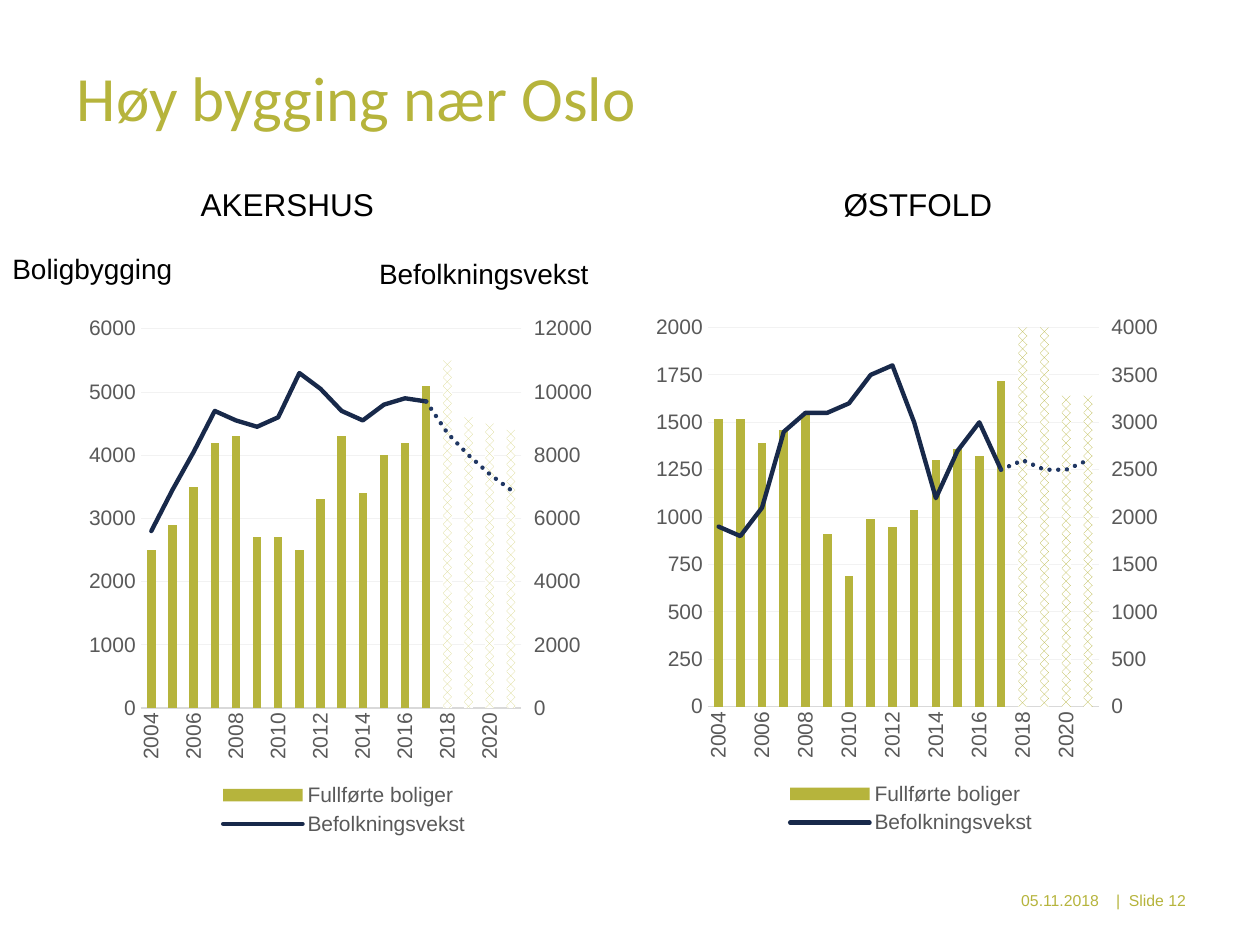
from copy import deepcopy
from dataclasses import dataclass

from lxml.etree import SubElement
from pptx import Presentation
from pptx.chart.axis import CategoryAxis, ValueAxis
from pptx.chart.data import CategoryChartData
from pptx.dml.color import RGBColor
from pptx.enum.chart import XL_CHART_TYPE, XL_LEGEND_POSITION, XL_MARKER_STYLE, XL_TICK_MARK
from pptx.enum.dml import MSO_LINE, MSO_PATTERN
from pptx.enum.text import MSO_ANCHOR, PP_ALIGN
from pptx.oxml import parse_xml
from pptx.oxml.ns import nsdecls, qn
from pptx.util import Inches, Pt


@dataclass(frozen=True)
class Theme:
    font: str = "Arial"
    title_font: str = "Calibri"
    olive: str = "B6B43C"
    pale_olive: str = "D9D889"
    navy: str = "18294A"
    forecast_navy: str = "203763"
    black: str = "000000"
    white: str = "FFFFFF"
    label_grey: str = "595959"
    axis_grey: str = "D9D9D9"
    grid_grey: str = "F2F2F2"
    title_size: int = 36
    heading_size: int = 18
    caption_size: int = 16
    chart_size: int = 12
    footer_size: int = 9


THEME = Theme()
COLUMNS, ROWS = 100, 75
SLIDE_WIDTH, SLIDE_HEIGHT = Inches(10), Inches(7.5)
YEARS = [str(year) for year in range(2004, 2022)]
LAST_ACTUAL = YEARS.index("2017")


@dataclass(frozen=True)
class County:
    name: str
    heading: tuple  # left offset and width, in columns
    plot_width: float  # share of the chart's width
    homes_max: int
    homes_step: int
    forecast_fill: str
    homes: tuple
    homes_forecast: tuple
    growth: tuple
    growth_forecast: tuple


AKERSHUS = County(
    "AKERSHUS", (6.1, 21), 0.73, 6000, 1000, THEME.pale_olive,
    homes=(2500, 2900, 3500, 4200, 4300, 2700, 2700, 2500, 3300, 4300, 3400, 4000, 4200, 5100),
    homes_forecast=(5500, 4600, 4500, 4400),
    growth=(5600, 6900, 8100, 9400, 9100, 8900, 9200, 10600, 10100, 9400, 9100, 9600, 9800, 9700),
    growth_forecast=(8700, 8000, 7400, 6900))
OSTFOLD = County(
    "ØSTFOLD", (12.1, 19.1), 0.75, 2000, 250, THEME.olive,
    homes=(1520, 1520, 1390, 1460, 1540, 910, 690, 990, 950, 1040, 1300, 1360, 1320, 1720),
    homes_forecast=(2210, 2030, 1640, 1640),
    growth=(1900, 1800, 2100, 2900, 3100, 3100, 3200, 3500, 3600, 3000, 2200, 2700, 3000, 2500),
    growth_forecast=(2600, 2500, 2500, 2600))


def on_grid(left, top, width, height):
    """Turn columns and rows into slide lengths."""
    column, row = SLIDE_WIDTH / COLUMNS, SLIDE_HEIGHT / ROWS
    return int(left * column), int(top * row), int(width * column), int(height * row)


def rgb(colour):
    return RGBColor.from_string(colour)


def style_font(font, size, colour, name=THEME.font):
    font.size, font.name = Pt(size), name
    font.color.rgb = rgb(colour)


def write(frame, text, size=THEME.caption_size, colour=THEME.black, name=THEME.font,
          align=PP_ALIGN.LEFT, anchor=MSO_ANCHOR.TOP, line_spacing=None):
    frame.word_wrap, frame.vertical_anchor = True, anchor
    paragraph = frame.paragraphs[0]
    paragraph.alignment, paragraph.line_spacing = align, line_spacing
    run = paragraph.add_run()
    run.text = text
    style_font(run.font, size, colour, name)


def add_text(slide, box, text, **text_format):
    write(slide.shapes.add_textbox(*on_grid(*box)).text_frame, text, **text_format)


def set_layout(parent, before, x, y, w, h, inner=False):
    """Fix a plot area or legend at shares of its chart."""
    for old in parent.findall(qn("c:layout")):
        parent.remove(old)
    layout = parse_xml(f"<c:layout {nsdecls('c')}><c:manualLayout/></c:layout>")
    settings = [("layoutTarget", "inner")] if inner else []
    settings += [("xMode", "edge"), ("yMode", "edge"), ("x", x), ("y", y), ("w", w), ("h", h)]
    for tag, value in settings:
        SubElement(layout[0], qn(f"c:{tag}")).set("val", str(value))
    if before is None:
        parent.insert(0, layout)
    else:
        before.addnext(layout)


def style_axes(chart, county):
    years, homes = chart.category_axis, chart.value_axis
    for axis in (years, homes):
        axis.major_tick_mark = axis.minor_tick_mark = XL_TICK_MARK.NONE
        style_font(axis.tick_labels.font, THEME.chart_size, THEME.label_grey)
    years.format.line.color.rgb = rgb(THEME.axis_grey)
    years.format.line.width = Pt(0.75)
    years._element.find(f"{qn('c:txPr')}/{qn('a:bodyPr')}").set("rot", "-5400000")
    skip = parse_xml(f'<c:tickLblSkip {nsdecls("c")} val="2"/>')
    years._element.find(qn("c:noMultiLvlLbl")).addprevious(skip)
    homes.minimum_scale, homes.maximum_scale = 0, county.homes_max
    homes.major_unit = county.homes_step
    homes.format.line.fill.background()
    homes.tick_labels.number_format = "0"
    homes.tick_labels.number_format_is_linked = False
    homes.major_gridlines.format.line.color.rgb = rgb(THEME.grid_grey)
    homes.major_gridlines.format.line.width = Pt(0.5)


def move_growth_to_right_axis(chart, county):
    """Draw the last two series as lines on a second axis, at twice the scale."""
    bars = chart.plots[0]._element
    lines = parse_xml(f'<c:lineChart {nsdecls("c")}><c:grouping val="standard"/>'
                      '<c:varyColors val="0"/></c:lineChart>')
    for series in bars.findall(qn("c:ser"))[2:]:
        for bar_only in series.findall(qn("c:invertIfNegative")):
            series.remove(bar_only)
        lines.append(series)
    SubElement(lines, qn("c:marker")).set("val", "1")
    bars.addnext(lines)

    years, homes = chart.category_axis._element, chart.value_axis._element
    right_years, right_growth = deepcopy(years), deepcopy(homes)
    ids = {"years": "5001", "growth": "5002"}
    for axis, own, other in ((right_years, "years", "growth"), (right_growth, "growth", "years")):
        axis.find(qn("c:axId")).set("val", ids[own])
        axis.find(qn("c:crossAx")).set("val", ids[other])
        SubElement(lines, qn("c:axId")).set("val", ids[own])
    right_growth.find(qn("c:axPos")).set("val", "r")
    right_growth.find(qn("c:crosses")).set("val", "max")
    homes.addnext(right_growth)
    right_growth.addnext(right_years)
    CategoryAxis(right_years).visible = False
    growth = ValueAxis(right_growth)
    growth.has_major_gridlines = False
    growth.major_tick_mark = XL_TICK_MARK.OUTSIDE
    growth.maximum_scale = 2 * county.homes_max
    growth.major_unit = 2 * county.homes_step


def style_series(chart, county):
    bars, lines = chart.plots
    bars.gap_width, bars.overlap, bars.vary_by_categories = 150, 100, False
    built, planned = bars.series
    built.format.fill.solid()
    built.format.fill.fore_color.rgb = rgb(THEME.olive)
    planned.format.fill.patterned()
    planned.format.fill.pattern = MSO_PATTERN.PERCENT_50
    planned.format.fill.fore_color.rgb = rgb(county.forecast_fill)
    planned.format.fill.back_color.rgb = rgb(THEME.white)
    looks = ((THEME.navy, MSO_LINE.SOLID), (THEME.forecast_navy, MSO_LINE.ROUND_DOT))
    for series, (colour, dash) in zip(lines.series, looks):
        series.smooth, series.marker.style = False, XL_MARKER_STYLE.NONE
        line = series.format.line
        line.color.rgb, line.width, line.dash_style = rgb(colour), Pt(2.5), dash
        series._element.find(f"{qn('c:spPr')}/{qn('a:ln')}").set("cap", "rnd")


def add_legend(chart):
    chart.has_legend = True
    legend = chart.legend
    legend.position, legend.include_in_layout = XL_LEGEND_POSITION.BOTTOM, False
    style_font(legend.font, THEME.chart_size, THEME.label_grey)
    previous = legend._element.find(qn("c:legendPos"))
    for hidden in (1, 3):  # the two forecasts
        entry = parse_xml(f'<c:legendEntry {nsdecls("c")}><c:idx val="{hidden}"/>'
                          '<c:delete val="1"/></c:legendEntry>')
        previous.addnext(entry)
        previous = entry
    set_layout(legend._element, previous, 0.25, 0.88, 0.52, 0.12)


def add_county(slide, county, left, top, width, height):
    # Heading above the chart
    offset, heading_width = county.heading
    add_text(slide, (left + offset, 14.2, heading_width, 4), county.name,
             size=THEME.heading_size, align=PP_ALIGN.CENTER)

    # Homes as columns, population growth as lines
    data = CategoryChartData(number_format="0")
    data.categories = YEARS
    blank = (None,) * len(county.homes_forecast)
    data.add_series("Fullførte boliger", county.homes + blank)
    data.add_series("Series 2", (None,) * (LAST_ACTUAL + 1) + county.homes_forecast)
    data.add_series("Befolkningsvekst", county.growth + blank)
    data.add_series("Series 4",
                    (None,) * LAST_ACTUAL + county.growth[-1:] + county.growth_forecast)
    chart = slide.shapes.add_chart(XL_CHART_TYPE.COLUMN_CLUSTERED,
                                   *on_grid(left, top, width, height), data).chart
    chart.has_title = False
    style_font(chart.font, 8, THEME.black)
    style_axes(chart, county)
    move_growth_to_right_axis(chart, county)
    style_series(chart, county)
    add_legend(chart)
    space = chart._chartSpace
    set_layout(space.chart.plotArea, None, 0.12, 0.04, county.plot_width, 0.71, inner=True)
    space.chart.addnext(parse_xml(
        f'<c:spPr {nsdecls("c", "a")}><a:solidFill><a:srgbClr val="{THEME.white}"/>'
        '</a:solidFill><a:ln><a:noFill/></a:ln></c:spPr>'))


def add_title(slide, box):
    title = slide.shapes.title
    title.left, title.top, title.width, title.height = on_grid(*box)
    write(title.text_frame, "Høy bygging nær Oslo", size=THEME.title_size, colour=THEME.olive,
          name=THEME.title_font, anchor=MSO_ANCHOR.MIDDLE, line_spacing=0.9)


def add_footer(slide, top, height):
    for text, left, width in (("05.11.2018", 76.6, 11.6), ("|  Slide 12", 86, 9.1)):
        add_text(slide, (left, top, width, height), text, size=THEME.footer_size,
                 colour=THEME.olive, align=PP_ALIGN.RIGHT, anchor=MSO_ANCHOR.MIDDLE)


def main():
    deck = Presentation()
    deck.slide_width, deck.slide_height = SLIDE_WIDTH, SLIDE_HEIGHT
    slide = deck.slides.add_slide(deck.slide_layouts[5])
    add_title(slide, (5.1, 4, 90, 8.1))
    add_footer(slide, 70.2, 2.5)
    # Axis captions
    add_text(slide, (0, 19.5, 16.8, 3.7), "Boligbygging")
    add_text(slide, (29.1, 19.9, 19.1, 3.7), "Befolkningsvekst")
    # County charts
    add_county(slide, AKERSHUS, 6.2, 24.4, 41.4, 42.4)
    add_county(slide, OSTFOLD, 51.2, 24.3, 41.4, 42.4)
    deck.save("out.pptx")


if __name__ == "__main__":
    main()
